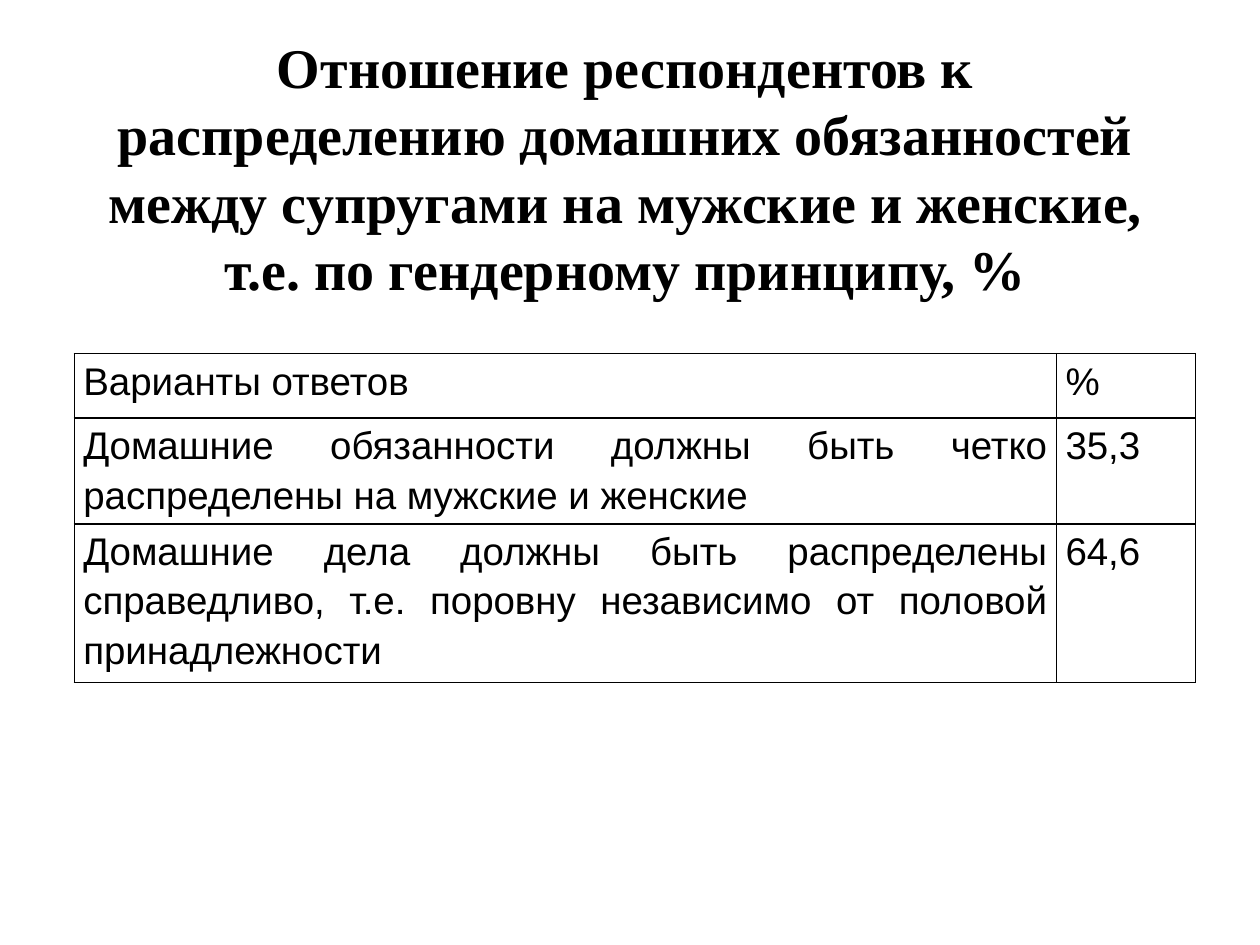
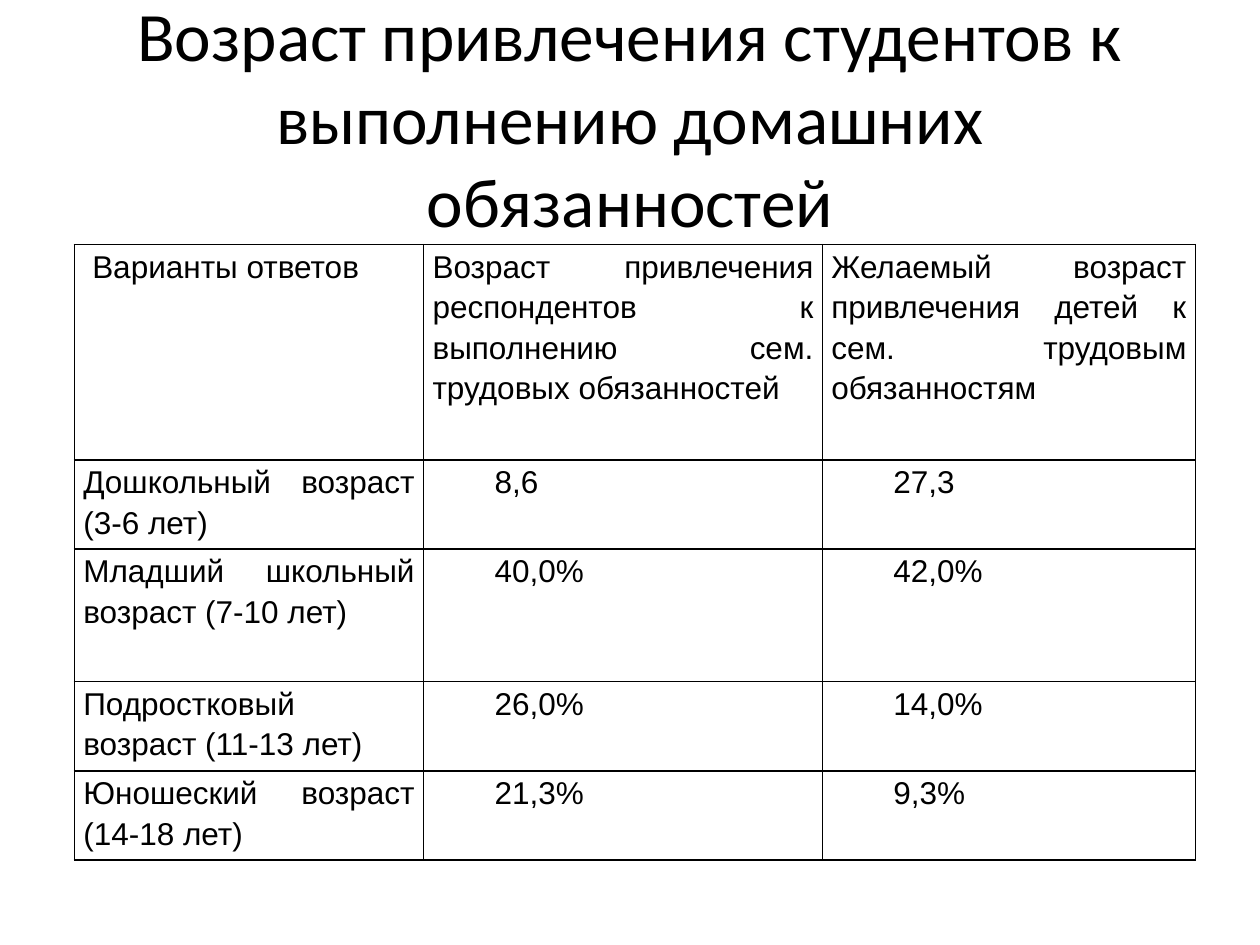
from lxml import etree
from pptx import Presentation
from pptx.dml.color import RGBColor
from pptx.enum.text import MSO_ANCHOR, MSO_AUTO_SIZE, PP_ALIGN
from pptx.oxml.ns import qn
from pptx.util import Cm, Pt

CENTER, JUSTIFY = PP_ALIGN.CENTER, PP_ALIGN.JUSTIFY
TOP, MIDDLE = MSO_ANCHOR.TOP, MSO_ANCHOR.MIDDLE
NO_AUTOFIT = MSO_AUTO_SIZE.NONE

BLACK, WHITE = "000000", "FFFFFF"
TABLE_FONT = "Arial"
TABLE_LEFT = 1.5
CELL_MARGIN = 0.18
TITLE_LAYOUT = 5

# Lengths are in centimetres, text sizes in points.
PAGES = [
    {
        "title": "Отношение респондентов к распределению домашних обязанностей "
                 "между супругами на мужские и женские, т.е. по гендерному принципу, %",
        "title_box": (1.9, 0.53, 21.42, 5.74),
        "title_font": ("Times New Roman", 32, True),
        "anchor": TOP,
        "table_top": 7.13,
        "columns": [19.8, 2.8],
        "row_heights": [1.3, 2.13, 3.2],
        "text_size": 22,
        "header_indent": 0,
        "value_indent": 0,
        "rows": [
            ("Варианты ответов", "%"),
            ("Домашние обязанности должны быть четко распределены "
             "на мужские и женские", "35,3"),
            ("Домашние дела должны быть распределены справедливо, т.е. "
             "поровну независимо от половой принадлежности", "64,6"),
        ],
    },
    {
        "title": "Возраст привлечения студентов к выполнению домашних обязанностей",
        "title_box": (1.27, 0.76, 22.86, 3.18),
        "title_font": ("Calibri", 39.6, False),
        "anchor": MIDDLE,
        "table_top": 4.93,
        "columns": [7.04, 8.04, 7.52],
        "row_heights": [4.34, 1.8, 2.67, 1.8, 1.8],
        "text_size": 18,
        "header_indent": 0.18,
        "value_indent": 1.25,
        "rows": [
            ("Варианты ответов",
             "Возраст привлечения респондентов к выполнению сем. "
             "трудовых обязанностей",
             "Желаемый возраст привлечения детей к сем. трудовым обязанностям"),
            ("Дошкольный возраст (3-6 лет)", "8,6", "27,3"),
            ("Младший школьный возраст (7-10 лет)", "40,0%", "42,0%"),
            ("Подростковый возраст (11-13 лет)", "26,0%", "14,0%"),
            ("Юношеский возраст (14-18 лет)", "21,3%", "9,3%"),
        ],
    },
]


def color(hex_code):
    return RGBColor.from_string(hex_code)


def style_text(para, name, size, bold=False):
    for span in para.runs:
        span.font.name = name
        span.font.size = Pt(size)
        span.font.bold = bold
        span.font.color.rgb = color(BLACK)


def add_title(page, content):
    title = page.shapes.title
    title.left, title.top, title.width, title.height = map(Cm, content["title_box"])
    frame = title.text_frame
    frame.text = content["title"]
    frame.word_wrap = True
    frame.auto_size = NO_AUTOFIT
    frame.vertical_anchor = content["anchor"]
    para = frame.paragraphs[0]
    para.alignment = CENTER
    style_text(para, *content["title_font"])


def add_borders(cell):
    properties = cell._tc.get_or_add_tcPr()
    for side in ("a:lnL", "a:lnR", "a:lnT", "a:lnB"):
        line = etree.SubElement(properties, qn(side), w=str(Pt(1)))
        fill = etree.SubElement(line, qn("a:solidFill"))
        etree.SubElement(fill, qn("a:srgbClr"), val=BLACK)


def fill_cell(cell, text, size, indent):
    add_borders(cell)
    cell.fill.solid()
    cell.fill.fore_color.rgb = color(WHITE)
    cell.margin_left = cell.margin_right = Cm(CELL_MARGIN)
    cell.margin_top = cell.margin_bottom = 0
    cell.text_frame.text = text
    para = cell.text_frame.paragraphs[0]
    para.alignment = JUSTIFY
    para.line_spacing = 1.15
    para.space_after = Pt(10)
    if indent:
        para._p.get_or_add_pPr().set("indent", str(Cm(indent)))
    style_text(para, TABLE_FONT, size)


def first_line_indent(content, row, column):
    """Indent the corner heading and the values, not the other labels."""
    if row == 0:
        return content["header_indent"] if column == 0 else 0
    return content["value_indent"] if column else 0


def add_answers_table(page, content):
    rows, columns, heights = content["rows"], content["columns"], content["row_heights"]
    table = page.shapes.add_table(
        len(rows), len(columns), Cm(TABLE_LEFT), Cm(content["table_top"]),
        Cm(sum(columns)), Cm(sum(heights))).table
    table.first_row = table.horz_banding = False
    for column, width in zip(table.columns, columns):
        column.width = Cm(width)
    for row, height in zip(table.rows, heights):
        row.height = Cm(height)
    for r, texts in enumerate(rows):
        for c, text in enumerate(texts):
            fill_cell(table.cell(r, c), text, content["text_size"],
                      first_line_indent(content, r, c))


def main():
    deck = Presentation()
    deck.slide_width, deck.slide_height = Cm(25.4), Cm(19.05)
    for content in PAGES:
        page = deck.slides.add_slide(deck.slide_layouts[TITLE_LAYOUT])
        add_title(page, content)
        add_answers_table(page, content)
    deck.save("out.pptx")


if __name__ == "__main__":
    main()
